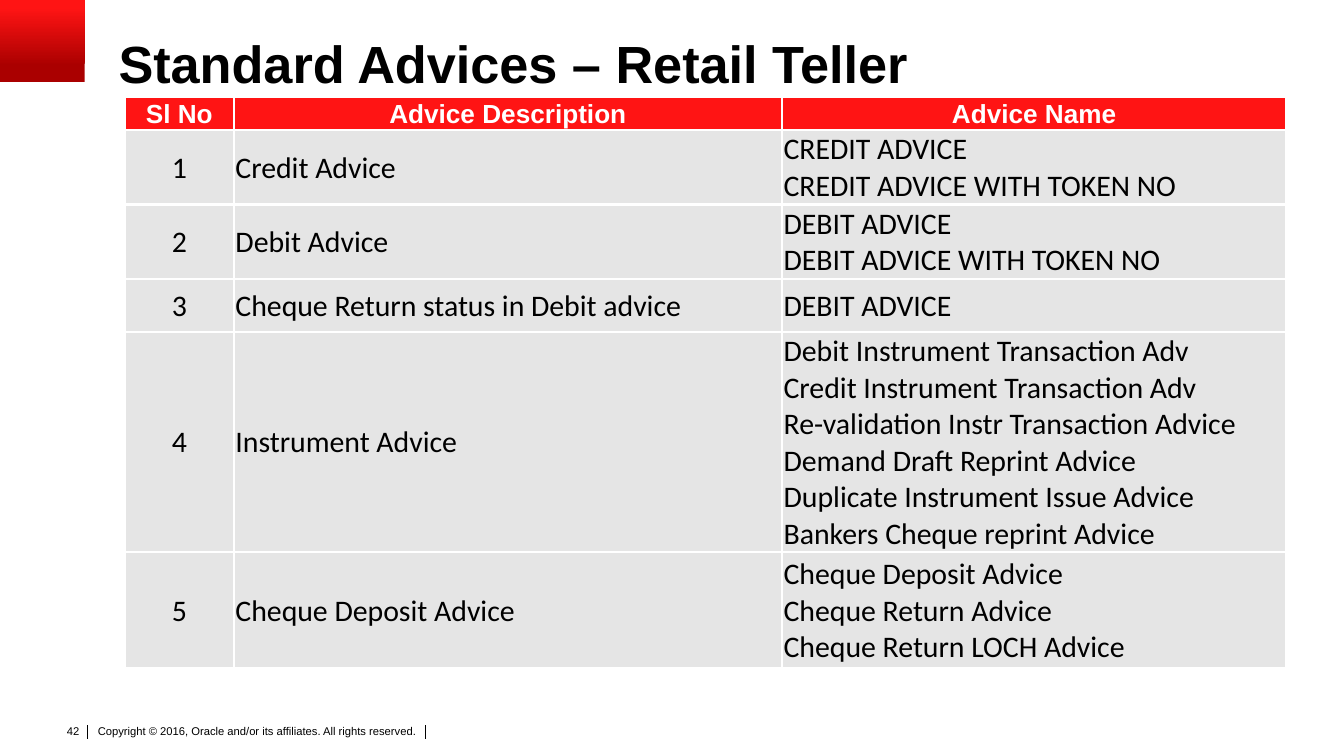
from lxml.etree import SubElement
from pptx import Presentation
from pptx.dml.color import RGBColor
from pptx.enum.shapes import MSO_CONNECTOR, MSO_SHAPE
from pptx.enum.text import MSO_ANCHOR, MSO_AUTO_SIZE, PP_ALIGN
from pptx.oxml.ns import qn
from pptx.util import Cm, Pt

COLORS = {
    "black": "000000",
    "white": "FFFFFF",
    "red": "FF1414",
    "dark_red": "AA0000",
    "gray": "E5E5E5",
}
HEADERS = ["Sl No", "Advice Description", "Advice Name"]
ADVICES = [
    ("Credit Advice", ["CREDIT ADVICE", "CREDIT ADVICE WITH TOKEN NO"]),
    ("Debit Advice", ["DEBIT ADVICE", "DEBIT ADVICE WITH TOKEN NO"]),
    ("Cheque Return status in Debit advice", ["DEBIT ADVICE"]),
    ("Instrument Advice", [
        "Debit Instrument Transaction Adv",
        "Credit Instrument Transaction Adv",
        "Re-validation Instr Transaction Advice",
        "Demand Draft Reprint Advice",
        "Duplicate Instrument Issue Advice",
        "Bankers Cheque reprint Advice",
    ]),
    ("Cheque Deposit Advice", [
        "Cheque Deposit Advice",
        "Cheque Return Advice",
        "Cheque Return LOCH Advice",
    ]),
]
COLUMN_WIDTHS = [2.06, 10.36, 9.53]
ROW_HEIGHTS = [0.58, 1.41, 1.41, 1.0, 4.16, 2.2]


def color(name):
    """Return the named colour."""
    return RGBColor.from_string(COLORS[name])


def style_paragraph(paragraph, size, font_name="Arial", color_name="black",
                    bold=False, alignment=PP_ALIGN.LEFT):
    """Set the font and alignment of a paragraph."""
    paragraph.alignment = alignment
    font = paragraph.font
    font.name, font.size, font.bold = font_name, Pt(size), bold
    font.color.rgb = color(color_name)


def set_margins(area, left, top, right, bottom):
    """Set the inner margins of a cell or text frame in centimetres."""
    area.margin_left, area.margin_top = Cm(left), Cm(top)
    area.margin_right, area.margin_bottom = Cm(right), Cm(bottom)


def add_corner(slide, left, top, width, height):
    """Draw the red gradient block in the corner."""
    shape = slide.shapes.add_shape(
        MSO_SHAPE.RECTANGLE, Cm(left), Cm(top), Cm(width), Cm(height))
    shape.shadow.inherit = False
    shape.line.fill.background()
    shape.fill.gradient()
    shape.fill.gradient_angle = 90
    stops = [(0.2, "dark_red"), (0.9, "red")]
    for stop, (position, name) in zip(shape.fill.gradient_stops, stops):
        stop.position = position
        stop.color.rgb = color(name)


def add_title(slide, left, top, width, height):
    """Place and format the slide title."""
    title = slide.shapes.title
    title.left, title.top = Cm(left), Cm(top)
    title.width, title.height = Cm(width), Cm(height)
    frame = title.text_frame
    frame.text = "Standard Advices – Retail Teller"
    frame.auto_size = MSO_AUTO_SIZE.NONE
    frame.vertical_anchor = MSO_ANCHOR.MIDDLE
    set_margins(frame, 0, 0, 0, 0)
    frame.paragraphs[0].line_spacing = 0.9
    style_paragraph(frame.paragraphs[0], 28, bold=True)


def add_borders(cell):
    """Give a cell white borders on all sides."""
    properties = cell._tc.get_or_add_tcPr()
    for side in ("a:lnL", "a:lnR", "a:lnT", "a:lnB"):
        line = SubElement(properties, qn(side), w=str(Pt(1.5)))
        fill = SubElement(line, qn("a:solidFill"))
        SubElement(fill, qn("a:srgbClr"), val=COLORS["white"])


def fill_cell(cell, text, fill_name, **style):
    """Write and format one table cell."""
    add_borders(cell)
    cell.fill.solid()
    cell.fill.fore_color.rgb = color(fill_name)
    cell.vertical_anchor = MSO_ANCHOR.MIDDLE
    set_margins(cell, 0.03, 0.03, 0.03, 0)
    cell.text = text
    for paragraph in cell.text_frame.paragraphs:
        style_paragraph(paragraph, **style)


def add_advice_table(slide, left, top):
    """Build the table of advices."""
    table = slide.shapes.add_table(
        len(ROW_HEIGHTS), len(COLUMN_WIDTHS), Cm(left), Cm(top),
        Cm(sum(COLUMN_WIDTHS)), Cm(sum(ROW_HEIGHTS))).table
    table.horz_banding = False
    for column, width in zip(table.columns, COLUMN_WIDTHS):
        column.width = Cm(width)
    for row, height in zip(table.rows, ROW_HEIGHTS):
        row.height = Cm(height)
    for index, header in enumerate(HEADERS):
        fill_cell(table.cell(0, index), header, "red", size=14, bold=True,
                  color_name="white", alignment=PP_ALIGN.CENTER)
    for number, (description, names) in enumerate(ADVICES, 1):
        texts = [str(number), description, "\n".join(names)]
        for index, text in enumerate(texts):
            alignment = PP_ALIGN.LEFT if index else PP_ALIGN.CENTER
            fill_cell(table.cell(number, index), text, "gray", size=16,
                      font_name="Calibri", alignment=alignment)


def add_footer_text(slide, text, box, margins, wrap, alignment):
    """Add one small footer text in the given box."""
    frame = slide.shapes.add_textbox(*map(Cm, box)).text_frame
    frame.word_wrap = wrap
    set_margins(frame, *margins)
    frame.text = text
    style_paragraph(frame.paragraphs[0], 6, alignment=alignment)


def add_footer(slide, left, top):
    """Add the page number, copyright line and separators."""
    add_footer_text(
        slide, "Copyright © 2016, Oracle and/or its affiliates. All rights reserved.",
        (left + 0.76, top + 0.08, 6.96, 0.61), (0.1, 0.05, 0.1, 0.05),
        True, PP_ALIGN.LEFT)
    for offset in (0.66, 7.05):
        x = Cm(left + offset)
        line = slide.shapes.add_connector(
            MSO_CONNECTOR.STRAIGHT, x, Cm(top + 0.15), x, Cm(top + 0.41))
        line.line.color.rgb = color("black")
        line.line.width = Pt(0.5)
        SubElement(line._element.spPr, qn("a:effectLst"))
    add_footer_text(slide, "42", (left, top, 0.76, 0.51),
                    (0.25, 0.13, 0.25, 0.13), False, PP_ALIGN.RIGHT)


def main():
    """Build and save the presentation."""
    presentation = Presentation()
    presentation.slide_width, presentation.slide_height = Cm(25.4), Cm(14.29)
    slide = presentation.slides.add_slide(presentation.slide_layouts[5])
    add_footer(slide, 0.99, 13.56)
    add_corner(slide, 0, 0, 1.6, 1.55)
    add_title(slide, 2.24, 0.69, 22.86, 1.12)
    add_advice_table(slide, 2.36, 1.83)
    presentation.save("out.pptx")


if __name__ == "__main__":
    main()
